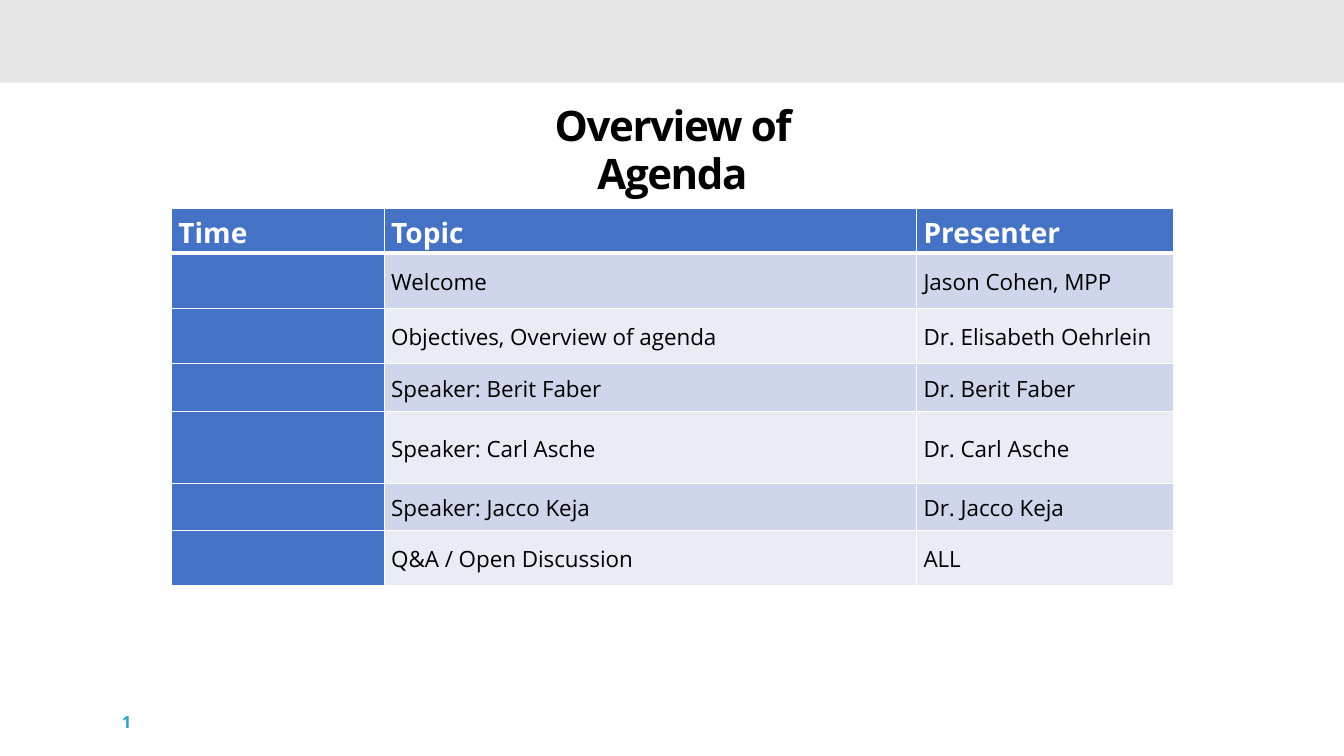
"""Build the agenda slide: grey band, heading, timetable and page number."""
from dataclasses import dataclass

from pptx import Presentation
from pptx import util as u
from pptx.dml.color import RGBColor
from pptx.enum import shapes, text
from pptx.oxml import parse_xml
from pptx.oxml.ns import nsdecls

PX = 9144


@dataclass(frozen=True)
class Theme:
    face: str = "Open Sans"
    band: str = "E7E6E6"
    blue: str = "4472C4"
    odd: str = "CFD5EA"
    even: str = "E9EBF5"
    white: str = "FFFFFF"
    black: str = "000000"
    cyan: str = "35A0CE"
    title: int = 30
    head: int = 20
    body: int = 16
    small: int = 12


@dataclass(frozen=True)
class Box:
    left: int
    top: int
    width: int
    height: int

    def emu(self) -> tuple[int, int, int, int]:
        return self.left * PX, self.top * PX, self.width * PX, self.height * PX


@dataclass(frozen=True)
class Row:
    height: int
    topic: str
    host: str
    time: str = ""


THEME = Theme()
BAND = Box(0, 0, 1333, 82)
TITLE = Box(468, 97, 398, 54)
TABLE = Box(170, 207, 994, 374)
NUMBER = Box(111, 696, 108, 40)
COLS = (211, 528, 255)
ROWS = (
    Row(44, "Topic", "Presenter", "Time"),
    Row(55, "Welcome", "Jason Cohen, MPP"),
    Row(55, "Objectives, Overview of agenda", "Dr. Elisabeth Oehrlein"),
    Row(47, "Speaker: Berit Faber", "Dr. Berit Faber"),
    Row(72, "Speaker: Carl Asche", "Dr. Carl Asche"),
    Row(46, "Speaker: Jacco Keja", "Dr. Jacco Keja"),
    Row(55, "Q&A / Open Discussion", "ALL"),
)


def style(para, size: int, color: str, bold: bool) -> None:
    font = para.font
    font.name, font.size, font.bold = THEME.face, u.Pt(size), bold
    font.color.rgb = RGBColor.from_string(color)


def add_band(slide) -> None:
    band = slide.shapes.add_shape(shapes.MSO_SHAPE.RECTANGLE, *BAND.emu())
    band.shadow.inherit = False
    band.fill.solid()
    band.fill.fore_color.rgb = RGBColor.from_string(THEME.band)
    band.line.fill.background()


def add_title(slide) -> None:
    title = slide.shapes.title
    title.left, title.top, title.width, title.height = TITLE.emu()
    frame = title.text_frame
    frame.text = "Overview of Agenda"
    frame.word_wrap = True
    frame.auto_size = text.MSO_AUTO_SIZE.NONE
    frame.vertical_anchor = text.MSO_ANCHOR.TOP
    para = frame.paragraphs[0]
    para.alignment = text.PP_ALIGN.CENTER
    para.line_spacing = u.Pt(34)
    style(para, THEME.title, THEME.black, True)
    para.runs[0].font._element.set("spc", "-100")


def add_rules(cell, base: int, top: int) -> None:
    props = cell._tc.get_or_add_tcPr()
    for spot, (side, width) in enumerate(zip("LRTB", (1, 1, top, base))):
        props.insert(spot, parse_xml(
            f'<a:ln{side} {nsdecls("a")} w="{u.Pt(width)}"><a:solidFill>'
            f'<a:srgbClr val="{THEME.white}"/></a:solidFill></a:ln{side}>'))


def fill_cell(cell, words: str, row: int, col: int) -> None:
    head = row == 0
    shade = THEME.blue if head or col == 0 else THEME.odd if row % 2 else THEME.even
    cell.fill.solid()
    cell.fill.fore_color.rgb = RGBColor.from_string(shade)
    cell.text = words
    cell.vertical_anchor = text.MSO_ANCHOR.MIDDLE
    cell.margin_left = cell.margin_right = 7 * PX
    cell.margin_top = cell.margin_bottom = 0
    para = cell.text_frame.paragraphs[0]
    para.line_spacing = 1.07
    style(para, THEME.head if head else THEME.body,
          THEME.white if head else THEME.black, head)
    add_rules(cell, 3 if head else 1, 3 if row == 1 else 1)


def add_agenda(slide) -> None:
    grid = slide.shapes.add_table(len(ROWS), len(COLS), *TABLE.emu()).table
    for col, width in zip(grid.columns, COLS):
        col.width = width * PX
    for i, row in enumerate(ROWS):
        grid.rows[i].height = row.height * PX
        for j, words in enumerate((row.time, row.topic, row.host)):
            fill_cell(grid.cell(i, j), words, i, j)


def add_number(slide) -> None:
    frame = slide.shapes.add_textbox(*NUMBER.emu()).text_frame
    frame.text = "1"
    frame.word_wrap = True
    frame.vertical_anchor = text.MSO_ANCHOR.MIDDLE
    style(frame.paragraphs[0], THEME.small, THEME.cyan, True)


def main() -> None:
    deck = Presentation()
    deck.slide_width, deck.slide_height = 1333 * PX, 750 * PX
    slide = deck.slides.add_slide(deck.slide_layouts[5])
    add_band(slide)
    add_title(slide)
    add_agenda(slide)
    add_number(slide)
    deck.save("out.pptx")


if __name__ == "__main__":
    main()
